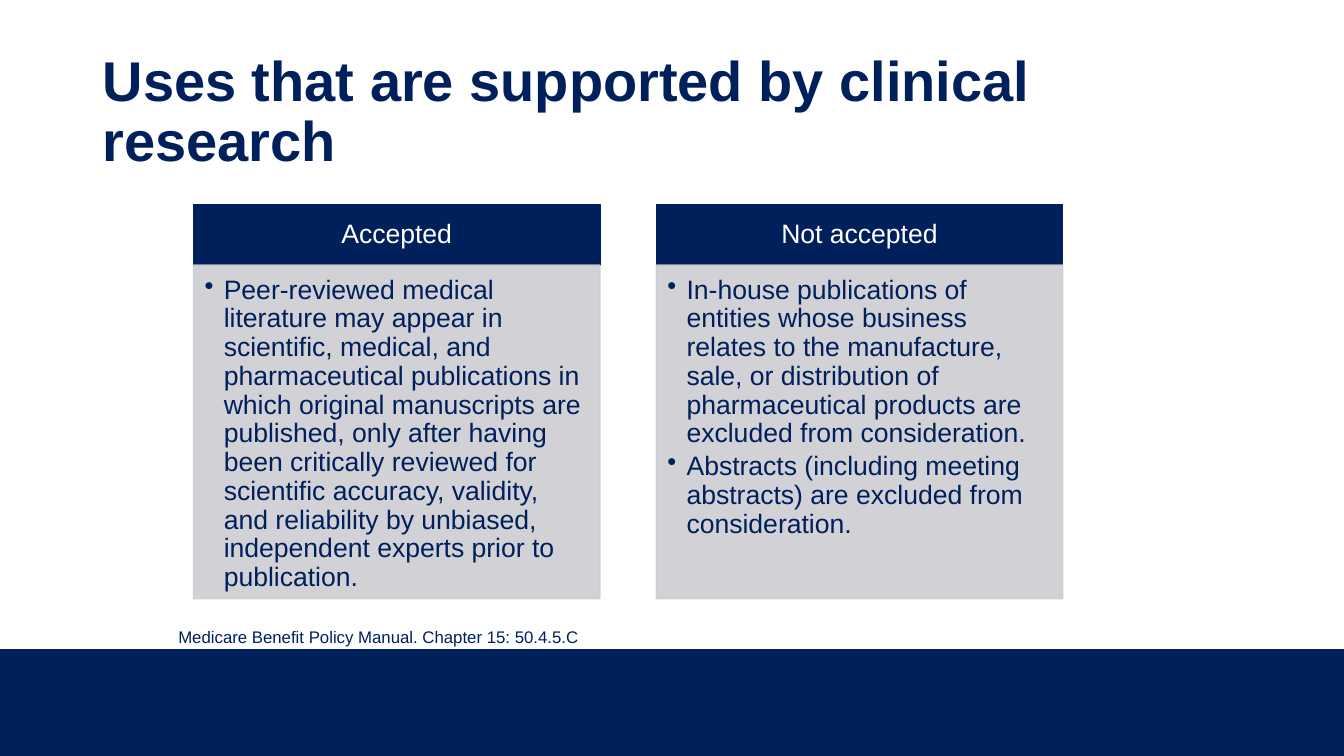
from lxml.etree import SubElement
from pptx import Presentation
from pptx.dml.color import RGBColor
from pptx.enum.shapes import MSO_SHAPE as Shape
from pptx.enum.text import MSO_ANCHOR as Anchor, PP_ALIGN as Align
from pptx.oxml.ns import qn
from pptx.util import Inches, Pt

NAVY = RGBColor(0x00, 0x20, 0x5B)
GRAY = RGBColor(0xCC, 0xCD, 0xD2)
WHITE = RGBColor(0xFF, 0xFF, 0xFF)

WIDTH, HEIGHT = 13.33, 7.5
LEFT, TOP, COL, STEP = 1.92, 2.03, 4.03, 4.59
HEAD, BODY = 0.6, 3.31
BAND = 6.44

COLUMNS = {
    "Accepted": [
        "Peer-reviewed medical literature may appear in scientific, medical, "
        "and pharmaceutical publications in which original manuscripts are "
        "published, only after having been critically reviewed for scientific "
        "accuracy, validity, and reliability by unbiased, independent experts "
        "prior to publication.",
    ],
    "Not accepted": [
        "In-house publications of entities whose business relates to the "
        "manufacture, sale, or distribution of pharmaceutical products are "
        "excluded from consideration.",
        "Abstracts (including meeting abstracts) are excluded from "
        "consideration.",
    ],
}


class Deck:
    font = "Arial"

    def __init__(self, slide):
        self.slide = slide

    def rect(self, box, color, alpha=None, line=True):
        shape = self.slide.shapes.add_shape(Shape.RECTANGLE, *map(Inches, box))
        shape.shadow.inherit = False
        shape.fill.solid()
        shape.fill.fore_color.rgb = color
        if line:
            shape.line.color.rgb = color
            shape.line.width = Pt(1)
        else:
            shape.line.fill.background()
        if alpha:
            for node in shape._element.spPr.iter(qn("a:srgbClr")):
                SubElement(node, qn("a:alpha"), val=str(alpha * 1000))
        return shape

    def text(self, box, lines, size, **style):
        shape = self.slide.shapes.add_textbox(*map(Inches, box))
        self.label(shape, lines, size, **style)

    def label(self, shape, lines, size, color=NAVY, bold=False, inset=None,
              anchor=Anchor.TOP, align=Align.LEFT, space=1, after=0,
              bullet=False):
        """Fill a shape with one paragraph per line."""
        frame = shape.text_frame
        frame.word_wrap = True
        frame.vertical_anchor = anchor
        if inset:
            for side, gap in zip(("left", "top", "right", "bottom"), inset):
                setattr(frame, f"margin_{side}", Inches(gap))
        frame.text = "\n".join(lines)
        for para in frame.paragraphs:
            if bullet:
                self.bullet(para)
            para.alignment = align
            para.line_spacing = space
            para.space_after = Pt(after)
            look = {"name": self.font, "size": Pt(size), "bold": bold}
            for name, value in look.items():
                setattr(para.font, name, value)
            para.font.color.rgb = color

    def bullet(self, para):
        props = para._p.get_or_add_pPr()
        indent = Inches(0.19)
        props.set("marL", str(indent))
        props.set("indent", str(-indent))
        SubElement(props, qn("a:buChar"), char="•")

    def column(self, left, head, points):
        bar = self.rect((left, TOP, COL, HEAD), NAVY)
        self.label(bar, [head], 19, color=WHITE, anchor=Anchor.MIDDLE,
                   align=Align.CENTER, space=0.9,
                   inset=(0.15, 0.08, 0.15, 0.08))
        panel = self.rect((left, TOP + HEAD, COL, BODY), GRAY, alpha=90)
        self.label(panel, points, 19, space=0.9, after=3, bullet=True,
                   inset=(0.11, 0.11, 0.15, 0.17))


def main():
    show = Presentation()
    show.slide_width, show.slide_height = Inches(WIDTH), Inches(HEIGHT)
    deck = Deck(show.slides.add_slide(show.slide_layouts[6]))

    deck.rect((0, BAND, WIDTH, HEIGHT - BAND), NAVY, line=False)
    deck.text((0.92, 0.4, 11.5, 1.45),
              ["Uses that are supported by clinical research"], 40,
              bold=True, anchor=Anchor.MIDDLE, space=0.9)
    for i, (head, points) in enumerate(COLUMNS.items()):
        deck.column(LEFT + i * STEP, head, points)
    deck.text((1.67, 6.17, 6.26, 0.3),
              ["Medicare Benefit Policy Manual. Chapter 15: 50.4.5.C"], 12)

    show.save("out.pptx")


if __name__ == "__main__":
    main()
